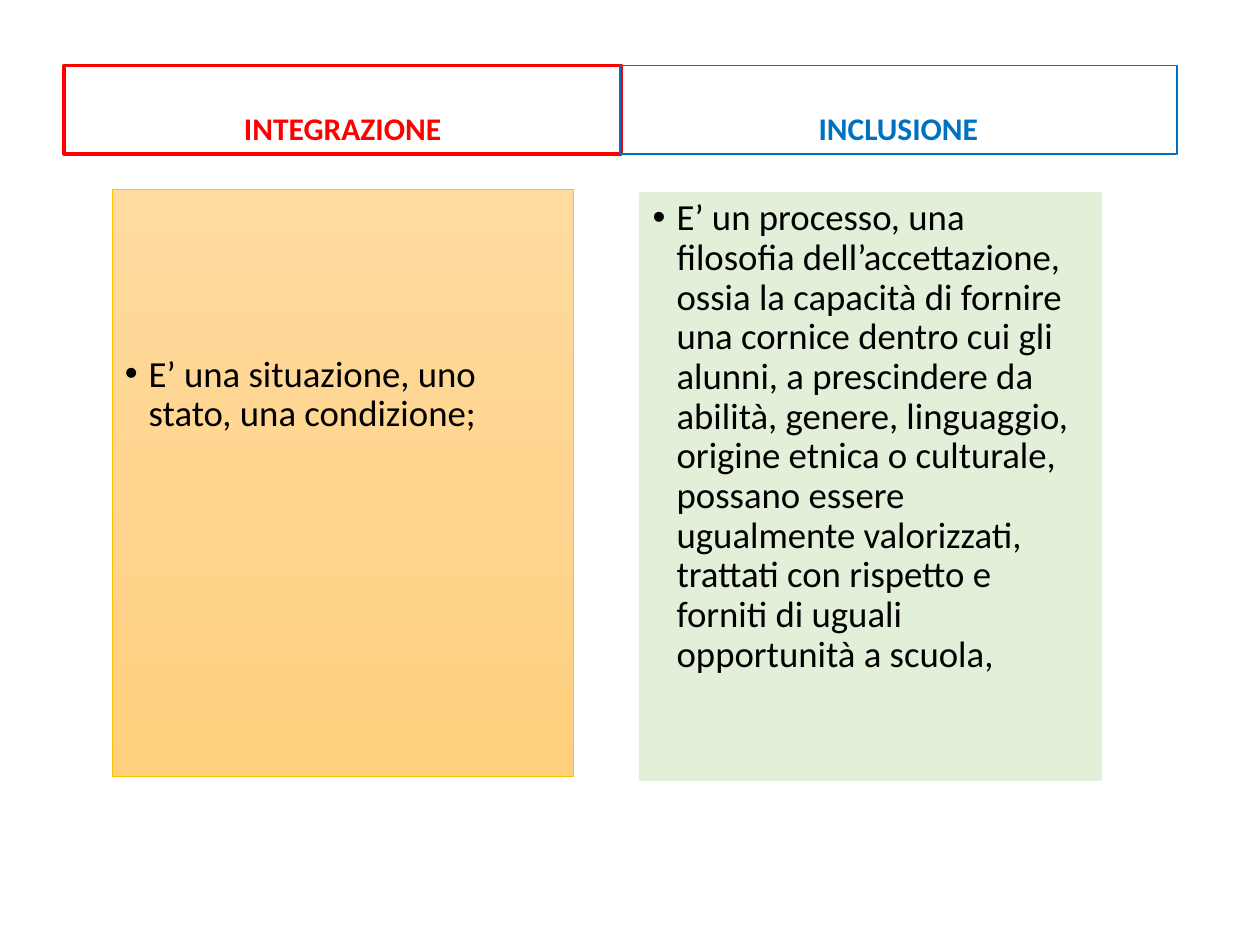
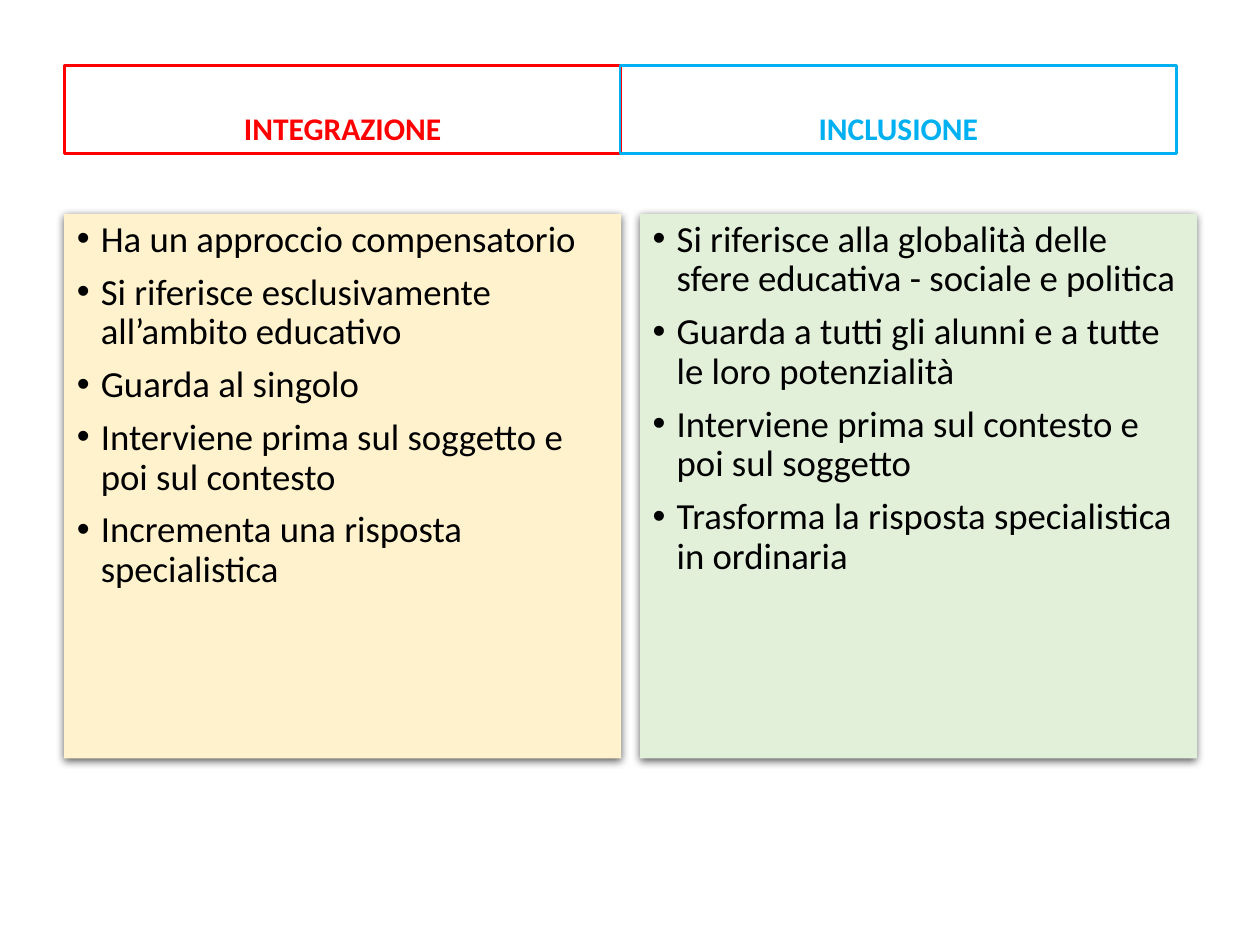
from lxml import etree
from pptx import Presentation
from pptx import util as u
from pptx.dml.color import RGBColor
from pptx.enum import text
from pptx.oxml import ns

COLS, ROWS = 100, 75
LEFT, RIGHT, HEAD_TOP = 5.1, 49.2, 5.2
HEAD_W, HEAD_H = 44.2, 7
PANEL_RIGHT = 50.8
FONT = "Calibri"

BLACK = RGBColor(0x00, 0x00, 0x00)
RED = RGBColor(0xFF, 0x00, 0x00)
BLUE = RGBColor(0x00, 0x70, 0xC0)
SKY = RGBColor(0x00, 0xB0, 0xF0)
GOLD = RGBColor(0xFF, 0xC0, 0x00)
CREAM = RGBColor(0xFF, 0xF2, 0xCC)
GREEN = RGBColor(0xE2, 0xF0, 0xD9)
AMBER = (
    RGBColor(0xFF, 0xDB, 0x9E),
    RGBColor(0xFF, 0xD5, 0x90),
    RGBColor(0xFF, 0xD0, 0x7C),
)


def add_xml(parent, tag, **attrs):
    return etree.SubElement(parent, ns.qn(tag), {k: str(v) for k, v in attrs.items()})


def write(tf, lines, size, color, bold=False, align=text.PP_ALIGN.LEFT,
          anchor=text.MSO_ANCHOR.TOP, bullet=None, inset_top=0.05):
    tf.word_wrap = True
    tf.auto_size = text.MSO_AUTO_SIZE.NONE
    tf.vertical_anchor = anchor
    tf.margin_left = tf.margin_right = u.Inches(0.1)
    tf.margin_top, tf.margin_bottom = u.Inches(inset_top), u.Inches(0.05)
    for i, line in enumerate(lines):
        p = tf.paragraphs[0] if i == 0 else tf.add_paragraph()
        p.alignment = align
        p.line_spacing = 0.9
        p.space_before, p.space_after = u.Pt(7.5), u.Pt(0)
        pr = p._p.get_or_add_pPr()
        indent = u.Inches(0.19) if bullet else 0
        pr.set("marL", str(indent))
        pr.set("indent", str(-indent))
        if bullet:
            add_xml(pr, "a:buFont", typeface="Arial")
            add_xml(pr, "a:buChar", char=bullet)
        else:
            add_xml(pr, "a:buNone")
        r = p.add_run()
        r.text = line
        r.font.name, r.font.size, r.font.bold = FONT, u.Pt(size), bold
        r.font.color.rgb = color


class Deck:
    def __init__(self):
        self.prs = Presentation()
        self.prs.slide_width, self.prs.slide_height = u.Inches(10), u.Inches(7.5)
        self.s = None

    def new_slide(self):
        layout = self.prs.slide_layouts.get_by_name("Comparison")
        self.s = self.prs.slides.add_slide(layout)
        title = self.s.shapes.title._element
        title.getparent().remove(title)

    def place(self, idx, col, row, cols, rows):
        sp = self.s.placeholders[idx]
        dx, dy = self.prs.slide_width / COLS, self.prs.slide_height / ROWS
        sp.left, sp.top = round(col * dx), round(row * dy)
        sp.width, sp.height = round(cols * dx), round(rows * dy)
        return sp

    def outline(self, sp, color, width):
        if color is None:
            sp.line.fill.background()
        else:
            sp.line.color.rgb = color
            sp.line.width = u.Pt(width)

    def gradient(self, sp, colors):
        sp.fill.gradient()
        sp.fill.gradient_angle = 270
        stops = sp._element.spPr.find(".//" + ns.qn("a:gsLst"))
        for gs in list(stops):
            stops.remove(gs)
        for i, color in enumerate(colors):
            gs = add_xml(stops, "a:gs", pos=100000 * i // (len(colors) - 1))
            add_xml(gs, "a:srgbClr", val=color)

    def drop_shadow(self, sp):
        effects = sp._element.spPr.find(ns.qn("a:effectLst"))
        shadow = add_xml(effects, "a:outerShdw", blurRad=u.Pt(4.5), dist=u.Pt(1.5),
                         dir=90 * 60000, algn="ctr", rotWithShape=0)
        add_xml(add_xml(shadow, "a:srgbClr", val=BLACK), "a:alpha", val=63000)

    def heading(self, idx, col, label, color, width):
        sp = self.place(idx, col, HEAD_TOP, HEAD_W, HEAD_H)
        sp.fill.background()
        self.outline(sp, color, width)
        write(sp.text_frame, [label], 18, color, bold=True,
              align=text.PP_ALIGN.CENTER, anchor=text.MSO_ANCHOR.BOTTOM)

    def headings(self, right_color, left_width, right_width):
        self.heading(1, LEFT, "INTEGRAZIONE", RED, left_width)
        self.heading(3, RIGHT, "INCLUSIONE", right_color, right_width)

    def panel(self, idx, box, lines, fill, line=None, width=1, shadow=False,
              inset_top=0.05):
        sp = self.place(idx, *box)
        if isinstance(fill, RGBColor):
            sp.fill.solid()
            sp.fill.fore_color.rgb = fill
        else:
            self.gradient(sp, fill)
        self.outline(sp, line, width)
        sp.shadow.inherit = False
        if shadow:
            self.drop_shadow(sp)
        write(sp.text_frame, lines, 21, BLACK, bullet="•", inset_top=inset_top)


def definitions(deck):
    deck.new_slide()
    deck.headings(BLUE, 2.25, 1)
    deck.panel(2, (8.9, 15, 36.6, 46.6),
               ["E’ una situazione, uno stato, una condizione;"],
               AMBER, line=GOLD, width=0.5, inset_top=1.32)
    deck.panel(4, (PANEL_RIGHT, 15.3, 36.6, 46.6), [
        "E’ un processo, una filosofia dell’accettazione, ossia la capacità di "
        "fornire una cornice dentro cui gli alunni, a prescindere da abilità, "
        "genere, linguaggio, origine etnica o culturale, possano essere "
        "ugualmente valorizzati, trattati con rispetto e forniti di uguali "
        "opportunità a scuola,",
    ], GREEN, line=GREEN)


def approaches(deck):
    deck.new_slide()
    deck.headings(SKY, 1.5, 1.5)
    columns = (
        (2, LEFT, CREAM, [
            "Ha un approccio compensatorio",
            "Si riferisce esclusivamente all’ambito educativo",
            "Guarda al singolo",
            "Interviene prima sul soggetto e poi sul contesto",
            "Incrementa una risposta specialistica",
        ]),
        (4, PANEL_RIGHT, GREEN, [
            "Si riferisce alla globalità delle sfere educativa - sociale e politica",
            "Guarda a tutti gli alunni e a tutte le loro potenzialità",
            "Interviene prima sul contesto e poi sul soggetto",
            "Trasforma la risposta specialistica in ordinaria",
        ]),
    )
    for idx, col, fill, lines in columns:
        deck.panel(idx, (col, 17, HEAD_W, 43.2), lines, fill, shadow=True)


def main():
    deck = Deck()
    definitions(deck)
    approaches(deck)
    deck.prs.save("out.pptx")


if __name__ == "__main__":
    main()
